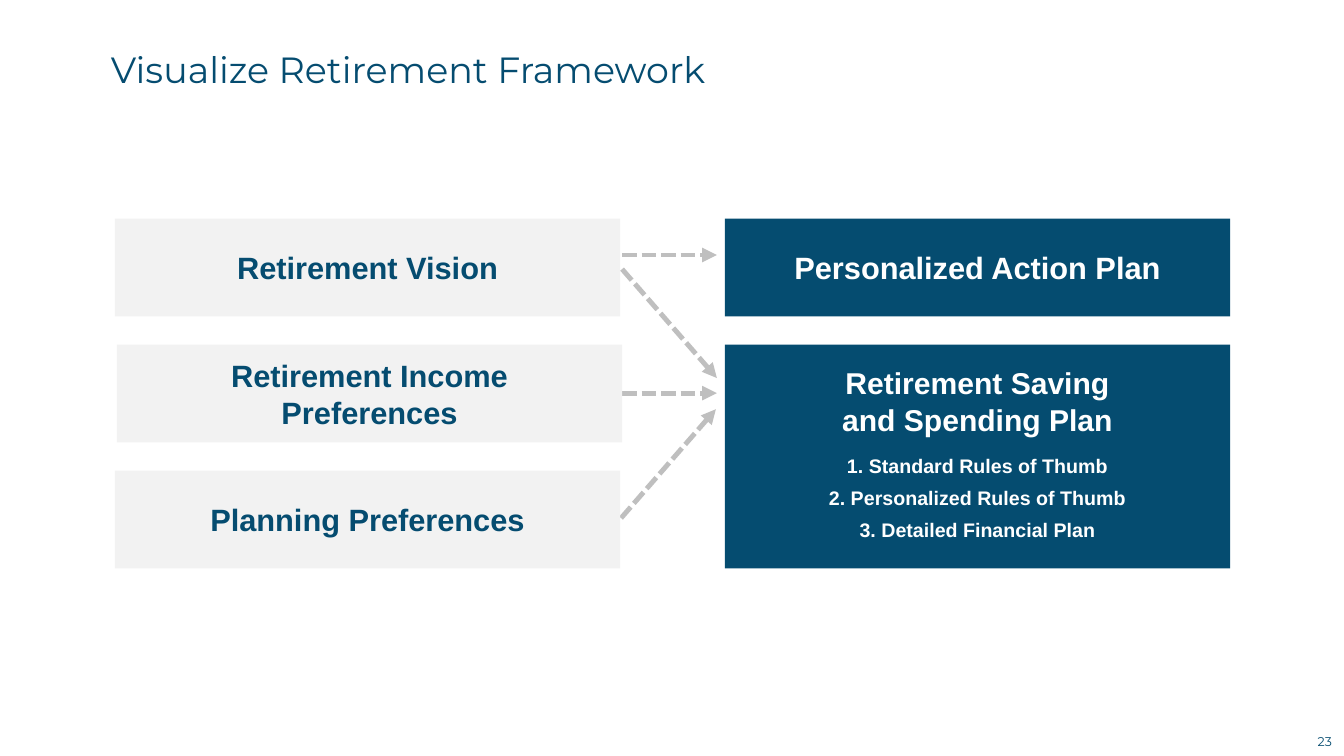
from dataclasses import dataclass

from lxml import etree
from pptx import Presentation
from pptx.dml.color import RGBColor
from pptx.enum.dml import MSO_LINE
from pptx.enum.shapes import MSO_CONNECTOR, MSO_SHAPE
from pptx.enum.text import MSO_ANCHOR, PP_ALIGN
from pptx.oxml.ns import qn
from pptx.util import Inches, Pt

CENTER, LEFT = PP_ALIGN.CENTER, PP_ALIGN.LEFT
TOP, MIDDLE = MSO_ANCHOR.TOP, MSO_ANCHOR.MIDDLE
RECTANGLE, STRAIGHT = MSO_SHAPE.RECTANGLE, MSO_CONNECTOR.STRAIGHT
DASH = MSO_LINE.SQUARE_DOT


@dataclass(frozen=True)
class Theme:
    navy: str = "054C70"
    pale: str = "F2F2F2"
    white: str = "FFFFFF"
    arrow: str = "BFBFBF"
    heading_font: str = "Montserrat"
    body_font: str = "Arial"
    title_size: float = 26
    box_size: float = 22
    plan_size: float = 21.5
    step_size: float = 14
    number_size: float = 9
    arrow_width: float = 3.5


THEME = Theme()

# Content
TITLE = "Visualize Retirement Framework"
PAGE_NUMBER = "23"
INPUTS = [  # text, left edge
    ("Retirement Vision", 1.14),
    ("Retirement Income\nPreferences", 1.16),
    ("Planning Preferences", 1.14),
]
ACTION_PLAN = "Personalized Action Plan"
SPENDING_PLAN = "Retirement Saving\nand Spending Plan"
STEPS = [
    "1. Standard Rules of Thumb",
    "2. Personalized Rules of Thumb",
    "3. Detailed Financial Plan",
]
ARROWS = [  # start x, start y, end x, end y
    (6.17, 2.53, 7.11, 2.53),
    (6.17, 2.67, 7.11, 3.75),
    (6.17, 3.9, 7.11, 3.9),
    (6.16, 5.14, 7.1, 4.06),
]

# Grid
FIRST_ROW, ROW_STEP = 2.17, 1.25
BOX_WIDTH, BOX_HEIGHT = 5.01, 0.97
PLAN_LEFT = 7.19


def color(code):
    return RGBColor.from_string(code)


def row_top(row):
    return FIRST_ROW + row * ROW_STEP


def write(para, text, size, ink, font=THEME.body_font, bold=True,
          align=CENTER, before=0):
    para.text = text
    para.alignment = align
    para.space_before = Pt(before)
    for span in para.runs:
        span.font.name = font
        span.font.size = Pt(size)
        span.font.bold = bold
        span.font.color.rgb = color(ink)


def set_frame(frame, anchor=MIDDLE, inset=0.1, top=None):
    frame.word_wrap = True
    frame.vertical_anchor = anchor
    frame.margin_left = frame.margin_right = frame.margin_bottom = Inches(inset)
    frame.margin_top = Inches(inset if top is None else top)


def add_box(page, text, left, row, fill, ink, rows=1, size=THEME.box_size,
            anchor=MIDDLE, top=0.1):
    height = BOX_HEIGHT + (rows - 1) * ROW_STEP
    box = page.shapes.add_shape(RECTANGLE, Inches(left), Inches(row_top(row)),
                                Inches(BOX_WIDTH), Inches(height))
    box.shadow.inherit = False
    box.fill.solid()
    box.fill.fore_color.rgb = color(fill)
    box.line.fill.background()
    set_frame(box.text_frame, anchor=anchor, top=top)
    write(box.text_frame.paragraphs[0], text, size, ink)
    return box


def add_arrow(page, *ends):
    arrow = page.shapes.add_connector(STRAIGHT, *map(Inches, ends))
    arrow.line.color.rgb = color(THEME.arrow)
    arrow.line.width = Pt(THEME.arrow_width)
    arrow.line.dash_style = DASH
    properties = arrow.element.spPr
    etree.SubElement(properties.find(qn("a:ln")), qn("a:tailEnd"), type="triangle")
    etree.SubElement(properties, qn("a:effectLst"))


def main():
    deck = Presentation()
    deck.slide_width, deck.slide_height = Inches(13.33), Inches(7.5)
    page = deck.slides.add_slide(deck.slide_layouts[5])

    # Title
    title = page.shapes.title
    title.left, title.top = Inches(1), Inches(0.28)
    title.width, title.height = Inches(11.5), Inches(0.81)
    set_frame(title.text_frame)
    write(title.text_frame.paragraphs[0], TITLE, THEME.title_size, THEME.navy,
          font=THEME.heading_font, bold=False, align=LEFT)

    # Arrows
    for ends in ARROWS:
        add_arrow(page, *ends)

    # Inputs on the left
    for row, (text, left) in enumerate(INPUTS):
        add_box(page, text, left, row, THEME.pale, THEME.navy)

    # Plans on the right
    add_box(page, ACTION_PLAN, PLAN_LEFT, 0, THEME.navy, THEME.white)
    plan = add_box(page, SPENDING_PLAN, PLAN_LEFT, 1, THEME.navy, THEME.white,
                   rows=2, size=THEME.plan_size, anchor=TOP, top=0.2)
    for index, step in enumerate(STEPS):
        write(plan.text_frame.add_paragraph(), step, THEME.step_size,
              THEME.white, before=6 if index else 12)

    # Page number
    number = page.shapes.add_textbox(Inches(12.97), Inches(7.23),
                                     Inches(0.34), Inches(0.25))
    set_frame(number.text_frame, inset=0)
    write(number.text_frame.paragraphs[0], PAGE_NUMBER, THEME.number_size,
          THEME.navy, font=THEME.heading_font, bold=False)

    deck.save("out.pptx")


if __name__ == "__main__":
    main()
